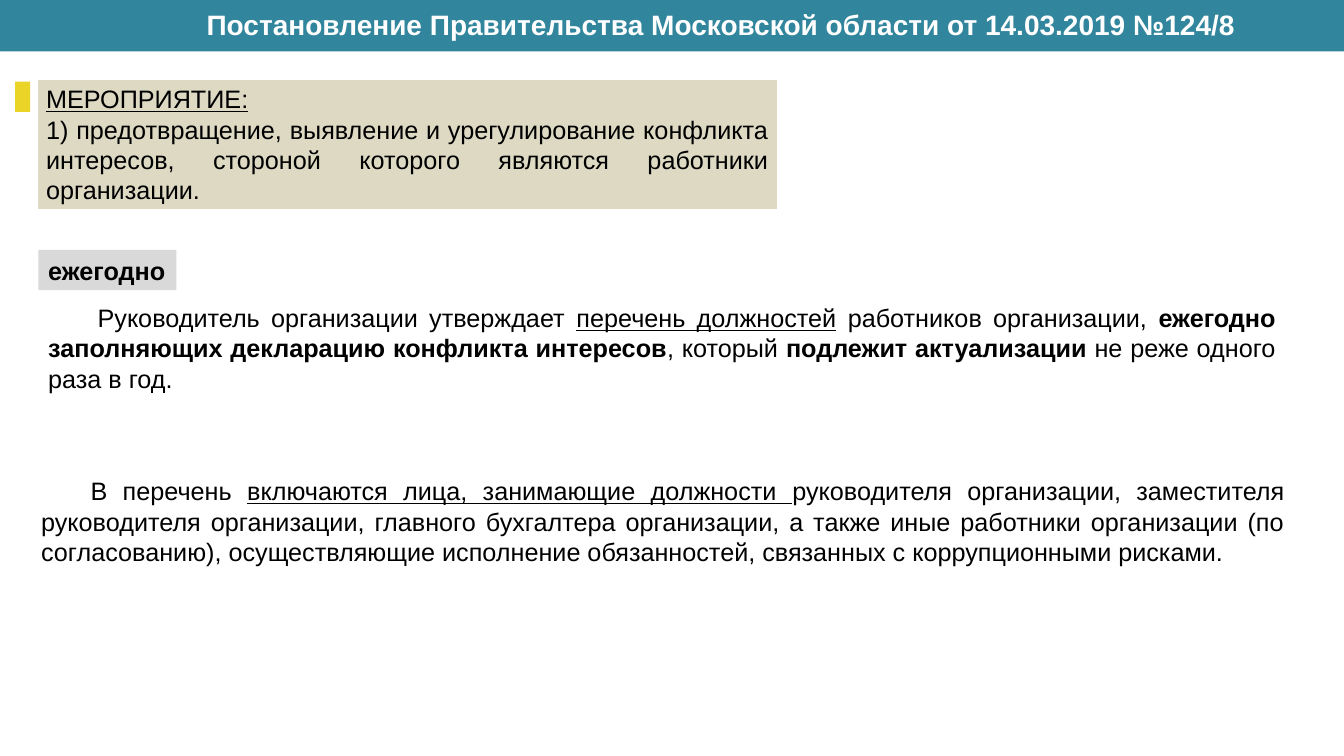
from pptx import Presentation
from pptx.dml.color import RGBColor
from pptx.enum import shapes, text
from pptx.util import Inches, Pt

HEADING = "Постановление Правительства Московской области от 14.03.2019 №124/8 "
BLACK, WHITE = "000000", "FFFFFF"
PLAIN, BOLD, UNDERLINED = {}, {"bold": True}, {"underline": True}
JUSTIFY, LEFT = text.PP_ALIGN.JUSTIFY, text.PP_ALIGN.LEFT

MEASURE = [
    [("МЕРОПРИЯТИЕ:", UNDERLINED)],
    [("1) предотвращение, выявление и урегулирование конфликта интересов, "
      "стороной которого являются работники организации.", PLAIN)],
]
APPROVAL = [[
    ("Руководитель организации утверждает ", PLAIN),
    ("перечень должностей", UNDERLINED),
    (" работников организации, ", PLAIN),
    ("ежегодно заполняющих декларацию конфликта интересов", BOLD),
    (", который ", PLAIN),
    ("подлежит актуализации ", BOLD),
    ("не реже одного раза в год.", PLAIN),
]]
POSITIONS = [[
    ("В перечень ", PLAIN),
    ("включаются лица, занимающие должности ", UNDERLINED),
    ("руководителя организации, заместителя руководителя организации, "
     "главного бухгалтера организации, а также иные работники организации "
     "(по согласованию), осуществляющие исполнение обязанностей, "
     "связанных с коррупционными рисками.", PLAIN),
]]
FREQUENCY = [[("ежегодно", BOLD)]]


def color(value):
    return RGBColor.from_string(value)


def write(frame, paragraphs, align, size=18, ink=BLACK, indent=0, spacing=None):
    for number, runs in enumerate(paragraphs):
        paragraph = frame.add_paragraph() if number else frame.paragraphs[0]
        paragraph.alignment = align
        if spacing:
            paragraph.line_spacing = spacing
        if indent:
            properties = paragraph._p.get_or_add_pPr()
            properties.set("marL", "0")
            properties.set("indent", str(Inches(indent)))
        for words, style in runs:
            run = paragraph.add_run()
            run.text = words
            font_values = {"name": "Arial", "size": Pt(size), "bold": False, **style}
            for attribute, value in font_values.items():
                setattr(run.font, attribute, value)
            run.font.color.rgb = color(ink)


def block(slide, place, fill=None, edge=None, edge_width=0):
    panel = slide.shapes.add_shape(shapes.MSO_SHAPE.RECTANGLE, *map(Inches, place))
    panel.shadow.inherit = False
    if fill:
        panel.fill.solid()
        panel.fill.fore_color.rgb = color(fill)
    else:
        panel.fill.background()
    if edge:
        panel.line.color.rgb = color(edge)
        panel.line.width = Pt(edge_width)
    else:
        panel.line.fill.background()
    return panel


def fill_text(panel, paragraphs, align=JUSTIFY, indent=0, wrap=True):
    frame = panel.text_frame
    frame_values = {"word_wrap": wrap, "vertical_anchor": text.MSO_ANCHOR.TOP}
    for attribute, value in frame_values.items():
        setattr(frame, attribute, value)
    write(frame, paragraphs, align, indent=indent)


def add_heading(slide):
    block(slide, (0, 0, 13.33, 0.51), "31859C")
    heading = slide.shapes.title
    slide.shapes._spTree.append(heading._element)
    place = dict(zip(("left", "top", "width", "height"), (1.17, 0.11, 12.04, 0.34)))
    for attribute, value in place.items():
        setattr(heading, attribute, Inches(value))
    frame = heading.text_frame
    frame_values = {
        "margin_left": Inches(0.09), "margin_right": Inches(0.09),
        "margin_top": Inches(0.04), "margin_bottom": Inches(0.04),
        "word_wrap": True, "auto_size": text.MSO_AUTO_SIZE.NONE,
        "vertical_anchor": text.MSO_ANCHOR.TOP,
    }
    for attribute, value in frame_values.items():
        setattr(frame, attribute, value)
    write(frame, [[(HEADING, BOLD)]], text.PP_ALIGN.CENTER, 20, WHITE, spacing=0.75)


def main():
    deck = Presentation()
    deck.slide_width, deck.slide_height = Inches(13.33), Inches(7.5)
    slide = deck.slides.add_slide(deck.slide_layouts[5])
    add_heading(slide)

    measure = block(slide, (0.36, 0.78, 7.36, 1.31), "DDD9C3", WHITE, 2.25)
    fill_text(measure, MEASURE)
    approval = block(slide, (0.38, 2.95, 12.37, 1.01), None, WHITE, 0.75)
    fill_text(approval, APPROVAL, indent=0.49)
    positions = slide.shapes.add_textbox(*map(Inches, (0.31, 4.67, 12.53, 1.01)))
    fill_text(positions, POSITIONS, indent=0.49)
    block(slide, (0.15, 0.81, 0.15, 0.3), "EAD428")
    frequency = block(slide, (0.38, 2.48, 1.37, 0.4), "D9D9D9")
    fill_text(frequency, FREQUENCY, LEFT, wrap=False)

    deck.save("out.pptx")


if __name__ == "__main__":
    main()
